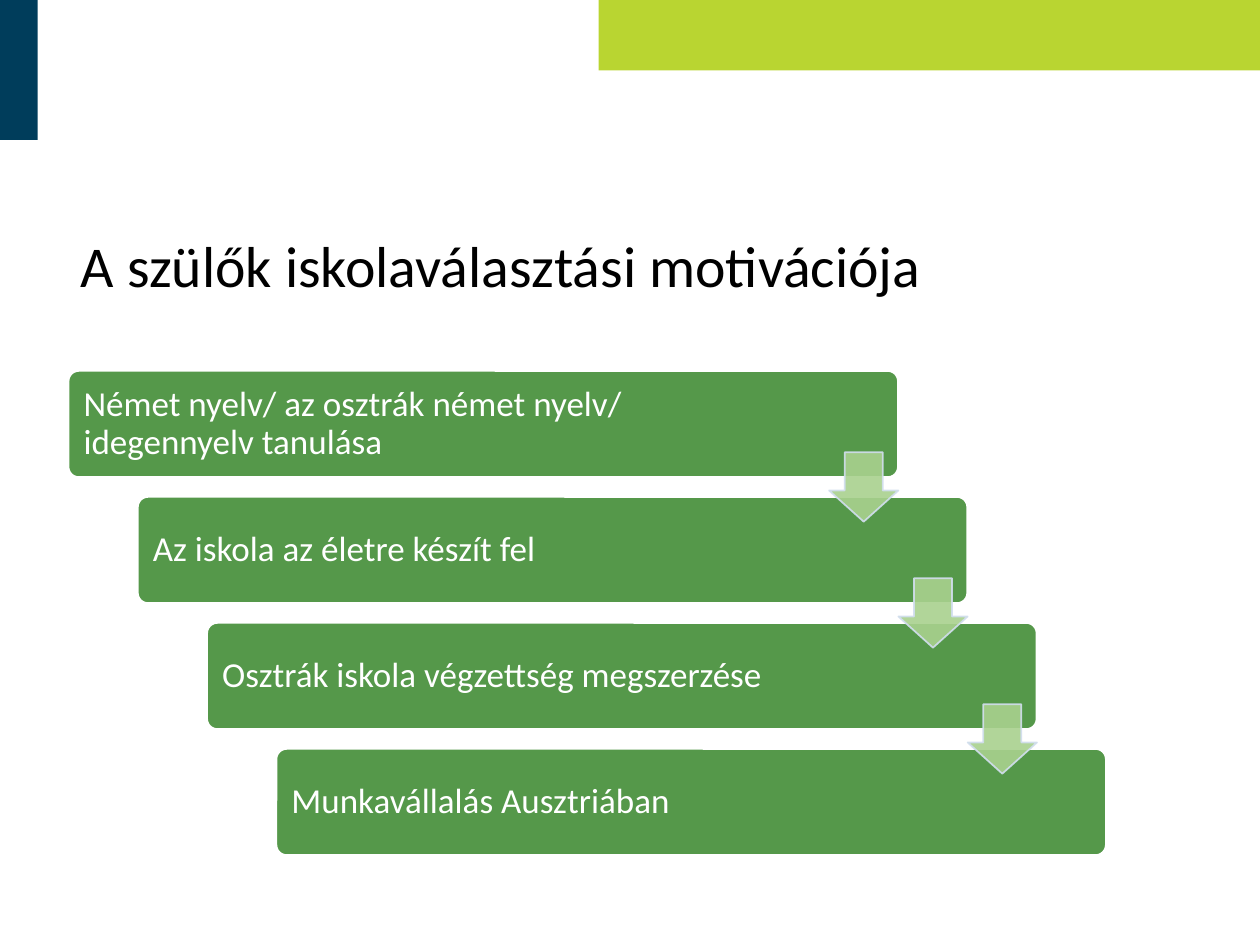
from dataclasses import dataclass

from lxml.etree import SubElement
from pptx import Presentation
from pptx.dml.color import RGBColor
from pptx.enum.shapes import MSO_SHAPE as Preset
from pptx.enum.text import MSO_ANCHOR as Anchor, PP_ALIGN as Align
from pptx.oxml.ns import qn
from pptx.util import Inches, Pt


@dataclass(frozen=True)
class Theme:
    font: str = "Calibri"
    title_size: int = 33
    step_size: int = 20
    ink: str = "000000"
    white: str = "FFFFFF"
    lime: str = "B9D531"
    navy: str = "003D5B"
    green: str = "55984A"
    arrow_fill: str = "A9D18E"
    arrow_line: str = "D2DEEF"
    arrow_opacity: int = 90


class SlideBuilder:
    def __init__(self, slide, theme):
        self.slide = slide
        self.theme = theme

    def title(self, text, left, top, width, height):
        shape = self.slide.shapes.title
        shape.left, shape.top = Inches(left), Inches(top)
        shape.width, shape.height = Inches(width), Inches(height)
        self.set_text(shape, text, self.theme.title_size, self.theme.ink)

    def block(self, preset, left, top, width, height, fill):
        shape = self.slide.shapes.add_shape(
            preset, Inches(left), Inches(top), Inches(width), Inches(height))
        shape.shadow.inherit = False
        shape.fill.solid()
        shape.fill.fore_color.rgb = RGBColor.from_string(fill)
        shape.line.fill.background()
        return shape

    def step(self, text, left, top, width, height):
        shape = self.block(Preset.ROUNDED_RECTANGLE, left, top, width, height,
                           self.theme.green)
        shape.adjustments[0] = 0.1
        self.outline(shape, self.theme.white, 1.5)
        self.set_text(shape, text, self.theme.step_size, self.theme.white)
        shape.text_frame.margin_right = Inches(1.05)

    def arrow(self, left, top, size):
        shape = self.block(Preset.DOWN_ARROW, left, top, size, size,
                           self.theme.arrow_fill)
        shape.adjustments[0], shape.adjustments[1] = 0.55, 0.45
        self.outline(shape, self.theme.arrow_line, 1)
        for color in shape._element.spPr.iter(qn("a:srgbClr")):
            SubElement(color, qn("a:alpha"),
                       val=str(self.theme.arrow_opacity * 1000))

    def outline(self, shape, color, width):
        shape.line.color.rgb = RGBColor.from_string(color)
        shape.line.width = Pt(width)

    def set_text(self, shape, text, size, color):
        frame = shape.text_frame
        frame.text = text
        frame.word_wrap = True
        frame.vertical_anchor = Anchor.MIDDLE
        paragraph = frame.paragraphs[0]
        paragraph.alignment = Align.LEFT
        paragraph.line_spacing = 0.9
        font = paragraph.runs[0].font
        font.name = self.theme.font
        font.size = Pt(size)
        font.color.rgb = RGBColor.from_string(color)


STEPS = [
    "Német nyelv/ az osztrák német nyelv/ idegennyelv tanulása",
    "Az iskola az életre készít fel",
    "Osztrák iskola végzettség megszerzése",
    "Munkavállalás Ausztriában",
]
LEFT, TOP = 0.54, 2.94
STEP_WIDTH, STEP_HEIGHT = 6.59, 0.85
SHIFT_RIGHT, SHIFT_DOWN = 0.55, 1.0
ARROW_SIZE, ARROW_DROP = 0.55, 0.65


def main():
    presentation = Presentation()
    presentation.slide_width, presentation.slide_height = Inches(10), Inches(7.5)
    title_only = presentation.slide_layouts[5]
    theme = Theme()
    builder = SlideBuilder(presentation.slides.add_slide(title_only), theme)

    builder.block(Preset.RECTANGLE, 4.75, 0, 5.25, 0.56, theme.lime)
    builder.block(Preset.RECTANGLE, 0, 0, 0.3, 1.11, theme.navy)
    builder.title("A szülők iskolaválasztási motivációja", 0.54, 1.41, 8.24, 1.45)

    corners = [(LEFT + i * SHIFT_RIGHT, TOP + i * SHIFT_DOWN)
               for i in range(len(STEPS))]
    for text, (left, top) in zip(STEPS, corners):
        builder.step(text, left, top, STEP_WIDTH, STEP_HEIGHT)
    for left, top in corners[:-1]:
        builder.arrow(left + STEP_WIDTH - ARROW_SIZE, top + ARROW_DROP, ARROW_SIZE)

    presentation.save("out.pptx")


if __name__ == "__main__":
    main()
